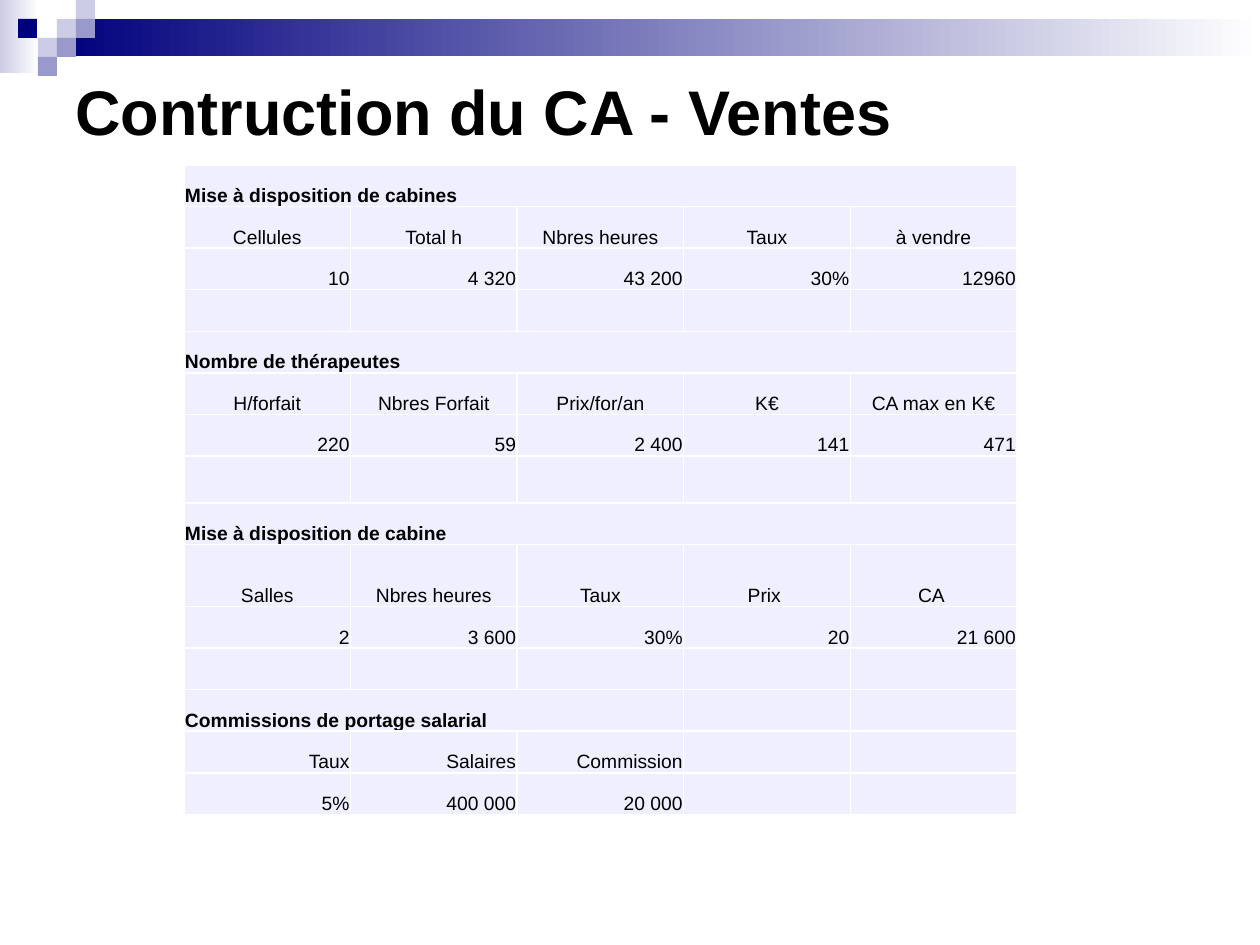
from dataclasses import dataclass

from lxml import etree
from pptx import Presentation
from pptx import util as u
from pptx.dml.color import RGBColor
from pptx.enum import shapes, text
from pptx.oxml.ns import qn


@dataclass(frozen=True)
class Theme:
    font: str = "Arial"
    title_size: int = 36
    cell_size: int = 11
    ink: str = "000000"
    white: str = "FFFFFF"
    navy: str = "00007D"
    violet: str = "9999CC"
    lilac: str = "CCCCE6"
    cell: str = "EFEFFF"


THEME = Theme()
PX_PER_INCH = 126
LEFT, CENTER, RIGHT = text.PP_ALIGN.LEFT, text.PP_ALIGN.CENTER, text.PP_ALIGN.RIGHT

# Each row: alignment, bold, columns spanned by the first cell, texts
HEADING = (LEFT, True, 5)
LABELS = (CENTER, False, 1)
VALUES = (RIGHT, False, 1)
SPACER = (*LABELS, [])
ROWS = [
    (*HEADING, ["Mise à disposition de cabines"]),
    (*LABELS, ["Cellules", "Total h", "Nbres heures", "Taux", "à vendre"]),
    (*VALUES, ["10", "4 320", "43 200", "30%", "12960"]),
    SPACER,
    (*HEADING, ["Nombre de thérapeutes"]),
    (*LABELS, ["H/forfait", "Nbres Forfait", "Prix/for/an", "K€", "CA max en K€"]),
    (*VALUES, ["220", "59", "2 400", "141", "471"]),
    SPACER,
    (*HEADING, ["Mise à disposition de cabine"]),
    (*LABELS, ["Salles", "Nbres heures", "Taux", "Prix ", "CA "]),
    (*VALUES, ["2", "3 600", "30%", "20", "21 600"]),
    SPACER,
    (LEFT, True, 3, ["Commissions de portage salarial"]),
    (*VALUES, ["Taux", "Salaires", "Commission"]),
    (*VALUES, ["5%", "400 000", "20 000"]),
]
COLUMNS = 5
TALL_ROWS = {7: 47, 9: 62}  # row index: height in px


def px(n):
    return u.Emu(round(n * u.Inches(1) / PX_PER_INCH))


def rgb(value):
    return RGBColor.from_string(value)


def style_paragraph(p, size, bold, align=LEFT):
    p.alignment = align
    p.font.name = THEME.font
    p.font.size = u.Pt(size)
    p.font.bold = bold
    p.font.color.rgb = rgb(THEME.ink)


def add_rect(s, x, y, w, h, color, fade_to=None):
    sp = s.shapes.add_shape(shapes.MSO_SHAPE.RECTANGLE, px(x), px(y), px(w), px(h))
    sp.shadow.inherit = False
    sp.line.fill.background()
    if fade_to:
        sp.fill.gradient()
        sp.fill.gradient_angle = 0
        for stop, value in zip(sp.fill.gradient_stops, (color, fade_to)):
            stop.color.rgb = rgb(value)
    else:
        sp.fill.solid()
        sp.fill.fore_color.rgb = rgb(color)


def add_banner(s, x, y, w):
    # Fading bands
    add_rect(s, x, y, 39, 73, THEME.lilac, THEME.white)
    add_rect(s, x + 57, y + 19, w - 57, 37, THEME.navy, THEME.white)
    # Mosaic of small squares
    side = 19
    for left, top, color in [
        (57, 19, THEME.lilac),
        (76, 0, THEME.lilac),
        (76, 19, THEME.violet),
        (38, 38, THEME.lilac),
        (18, 19, THEME.navy),
        (57, 38, THEME.violet),
        (38, 57, THEME.violet),
    ]:
        add_rect(s, x + left, y + top, side, side, color)


def add_title(s, x, y, w, h, title):
    tf = s.shapes.add_textbox(px(x), px(y), px(w), px(h)).text_frame
    tf.word_wrap = True
    tf.vertical_anchor = text.MSO_ANCHOR.MIDDLE
    p = tf.paragraphs[0]
    p.text = title
    style_paragraph(p, THEME.title_size, True)


def set_borders(cell, color, width):
    tcPr = cell._tc.get_or_add_tcPr()
    for i, side in enumerate(("lnL", "lnR", "lnT", "lnB")):
        ln = etree.Element(qn(f"a:{side}"), w=str(u.Pt(width)))
        fill = etree.SubElement(ln, qn("a:solidFill"))
        etree.SubElement(fill, qn("a:srgbClr"), val=color)
        tcPr.insert(i, ln)  # borders come before the fill


def fill_cell(cell, value, align, bold):
    cell.fill.solid()
    cell.fill.fore_color.rgb = rgb(THEME.cell)
    cell.vertical_anchor = text.MSO_ANCHOR.BOTTOM
    cell.margin_left = cell.margin_right = cell.margin_top = px(1)
    cell.margin_bottom = 0
    p = cell.text_frame.paragraphs[0]
    p.text = value
    style_paragraph(p, THEME.cell_size, bold, align)
    set_borders(cell, THEME.white, 1)


def add_sales_table(s, x, y, w, h):
    frame = s.shapes.add_table(len(ROWS), COLUMNS, px(x), px(y), px(w), px(h))
    table = frame.table
    table.first_row = table.horz_banding = False
    for column in table.columns:
        column.width = px(w / COLUMNS)
    row_height = (h - sum(TALL_ROWS.values())) / (len(ROWS) - len(TALL_ROWS))
    for i, (align, bold, span, values) in enumerate(ROWS):
        table.rows[i].height = px(TALL_ROWS.get(i, row_height))
        for j in range(COLUMNS):
            value = values[j] if j < len(values) else ""
            fill_cell(table.cell(i, j), value, align, bold)
        if span > 1:
            table.cell(i, 0).merge(table.cell(i, span - 1))


def main():
    prs = Presentation()
    prs.slide_width, prs.slide_height = px(1260), px(945)
    s = prs.slides.add_slide(prs.slide_layouts[6])
    add_banner(s, 0, 0, 1260)
    add_title(s, 63, 16, 1134, 189, "Contruction du CA - Ventes")
    add_sales_table(s, 184, 165, 833, 650)
    prs.save("out.pptx")


if __name__ == "__main__":
    main()
